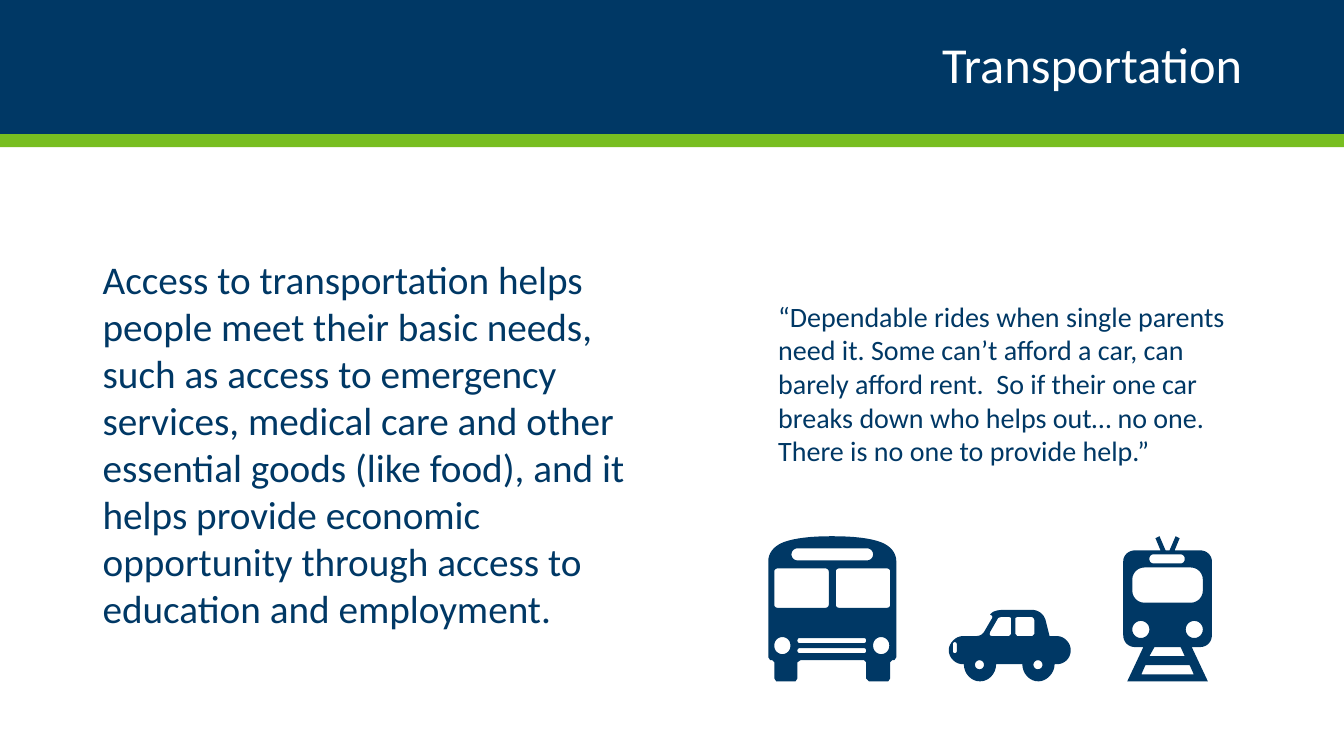
import math

from pptx import Presentation
from pptx.dml.color import RGBColor
from pptx.enum.shapes import MSO_SHAPE
from pptx.enum.text import MSO_ANCHOR, PP_ALIGN
from pptx.util import Inches, Pt

RECT = MSO_SHAPE.RECTANGLE
TOP, MIDDLE = MSO_ANCHOR.TOP, MSO_ANCHOR.MIDDLE
LEFT, RIGHT = PP_ALIGN.LEFT, PP_ALIGN.RIGHT
COLORS = {"navy": "003865", "green": "78BE21", "white": "FFFFFF"}
FONT = "Calibri"

TITLE = "Transportation"
BODY = ("Access to transportation helps people meet their basic needs, such as access to "
        "emergency services, medical care and other essential goods (like food), and it "
        "helps provide economic opportunity through access to education and employment.")
QUOTE = ("“Dependable rides when single parents need it. Some can’t afford a car, can barely "
         "afford rent.  So if their one car breaks down who helps out… no one. There is no "
         "one to provide help.”")

BUS = [(0.15, 0.06), (0.26, 0.02, 0.41, 0, 0.63, 0), (0.86, 0, 1.01, 0.02, 1.12, 0.06),
       (1.22, 0.1, 1.27, 0.17, 1.27, 0.25), (1.27, 1.2), (1.25, 1.23), (1.23, 1.23),
       (1.21, 1.25), (1.21, 1.41), (1.19, 1.44), (1, 1.44), (0.97, 1.41), (0.97, 1.25),
       (0.95, 1.23), (0.32, 1.23), (0.29, 1.25), (0.29, 1.41), (0.27, 1.44), (0.08, 1.44),
       (0.06, 1.41), (0.06, 1.25), (0.04, 1.23), (0.02, 1.23), (0, 1.2), (0, 0.25),
       (0, 0.17, 0.05, 0.1, 0.15, 0.06)]
CAR = [(1.07, 0.26), (1, 0.26), (0.96, 0.1), (0.94, 0.04, 0.89, 0, 0.82, 0), (0.56, 0),
       (0.49, 0, 0.43, 0.01, 0.41, 0.05), (0.42, 0.05, 0.45, 0.06, 0.42, 0.1),
       (0.35, 0.22), (0.33, 0.25, 0.3, 0.26, 0.27, 0.26), (0.14, 0.26),
       (0.07, 0.26, 0, 0.33, 0, 0.4), (0, 0.48, 0.07, 0.54, 0.14, 0.54), (0.15, 0.54),
       (0.15, 0.63, 0.22, 0.71, 0.31, 0.71), (0.4, 0.71, 0.47, 0.63, 0.47, 0.54),
       (0.73, 0.54), (0.73, 0.63, 0.8, 0.71, 0.89, 0.71),
       (0.97, 0.71, 1.05, 0.63, 1.05, 0.54), (1.07, 0.54),
       (1.15, 0.54, 1.21, 0.48, 1.21, 0.4), (1.21, 0.33, 1.15, 0.26, 1.07, 0.26)]
CAR_FRONT_WINDOW = [(0.62, 0.24), (0.6, 0.26), (0.43, 0.26), (0.41, 0.26, 0.4, 0.25, 0.41, 0.22),
                    (0.49, 0.08), (0.52, 0.07), (0.6, 0.07), (0.62, 0.08)]
CAR_REAR_WINDOW = [(0.66, 0.24), (0.66, 0.08), (0.68, 0.07), (0.81, 0.07),
                   (0.83, 0.07, 0.85, 0.08, 0.85, 0.11), (0.85, 0.24), (0.83, 0.26), (0.68, 0.26)]
TRAM = [(0.88, 0.98), (0.88, 0.25), (0.88, 0.19, 0.83, 0.14, 0.76, 0.14), (0.51, 0.14),
        (0.56, 0.02), (0.52, 0), (0.46, 0.14), (0.42, 0.14), (0.36, 0), (0.32, 0.02),
        (0.37, 0.14), (0.12, 0.14), (0.05, 0.14, 0, 0.19, 0, 0.25), (0, 0.98),
        (0, 1.05, 0.05, 1.1, 0.12, 1.1), (0.2, 1.1), (0.04, 1.44), (0.84, 1.44), (0.68, 1.1),
        (0.76, 1.1), (0.83, 1.1, 0.88, 1.05, 0.88, 0.98)]
TRAM_TRACKS = [[(0.61, 1.19), (0.26, 1.19), (0.31, 1.1), (0.57, 1.1)],
               [(0.7, 1.37), (0.18, 1.37), (0.22, 1.28), (0.66, 1.28)]]


def flatten(path, steps=8):
    """Return the points of a path whose items are line ends or cubic curves."""
    points = []
    for item in path:
        if len(item) == 2:
            points.append(item)
            continue
        ends = (points[-1], item[:2], item[2:4], item[4:])
        for i in range(1, steps + 1):
            t = i / steps
            weights = ((1 - t) ** 3, 3 * t * (1 - t) ** 2, 3 * t * t * (1 - t), t ** 3)
            points.append(tuple(sum(w * e[axis] for w, e in zip(weights, ends))
                                for axis in (0, 1)))
    return points


def rounded(x, y, w, h, radius, steps=6):
    """Return the points of a rounded rectangle, or of a circle at full radius."""
    centers = ((x + w - radius, y + h - radius), (x + radius, y + h - radius),
               (x + radius, y + radius), (x + w - radius, y + radius))
    points = []
    for quarter, (cx, cy) in enumerate(centers):
        for i in range(steps + 1):
            a = (quarter + i / steps) * math.pi / 2
            points.append((cx + radius * math.cos(a), cy + radius * math.sin(a)))
    return points


def paint(shape, color):
    """Give a shape a plain fill without line or shadow."""
    shape.shadow.inherit = False
    shape.fill.solid()
    shape.fill.fore_color.rgb = RGBColor.from_string(COLORS[color])
    shape.line.fill.background()


def add_icon(s, left, top, outline, holes):
    """Draw one icon with cut-out holes from the given top left corner."""
    contours = [[(Inches(left + x), Inches(top + y)) for x, y in points]
                for points in [flatten(outline)] + holes]
    builder = s.shapes.build_freeform(*contours[0][0])
    builder.add_line_segments(contours[0][1:])
    for contour in contours[1:]:
        builder.move_to(*contour[0])
        builder.add_line_segments(contour[1:])
    paint(builder.convert_to_shape(), "navy")


def add_text(s, box, text, size, color, align=LEFT, anchor=TOP, inset=0.05, spacing=1.0):
    """Place one wrapped paragraph in a box."""
    tf = s.shapes.add_textbox(*map(Inches, box)).text_frame
    frame = {"word_wrap": True, "vertical_anchor": anchor, "margin_top": Inches(inset)}
    for name, value in frame.items():
        setattr(tf, name, value)
    p = tf.paragraphs[0]
    p.alignment, p.line_spacing = align, spacing
    r = p.add_run()
    r.text = text
    for name, value in {"name": FONT, "size": Pt(size)}.items():
        setattr(r.font, name, value)
    r.font.color.rgb = RGBColor.from_string(COLORS[color])


def add_header(s, left, top, width, height):
    """Draw the title band with its green rule and title."""
    rule = 0.13
    for y, h, color in ((top, height, "navy"), (top + height, rule, "green")):
        paint(s.shapes.add_shape(RECT, *map(Inches, (left, y, width, h))), color)
    add_text(s, (left + 0.92, top + 0.17, 11.5, 1), TITLE, 36, "white", RIGHT, MIDDLE,
             spacing=0.9)


def add_vehicles(s, left, top, height):
    """Stand the bus, car and tram on the bottom line of the box."""
    add_icon(s, left, top, BUS, [
        rounded(0.23, 0.12, 0.81, 0.12, 0.06),
        *[rounded(x, 0.32, 0.54, 0.39, 0.03) for x in (0.06, 0.67)],
        *[rounded(x, 1, 0.16, 0.17, 0.08) for x in (0.06, 1.04)],
        *[rounded(0.29, y, 0.68, 0.05, 0.02) for y in (1.01, 1.11)]])
    add_icon(s, left + 1.79, top + height - 0.71, CAR, [
        rounded(0.04, 0.32, 0.04, 0.11, 0.02),
        *[rounded(x, 0.5, 0.09, 0.09, 0.045) for x in (0.26, 0.84)],
        flatten(CAR_FRONT_WINDOW), flatten(CAR_REAR_WINDOW)])
    add_icon(s, left + 3.52, top, TRAM, [
        rounded(0.26, 0.18, 0.35, 0.09, 0.04),
        rounded(0.09, 0.31, 0.7, 0.35, 0.12),
        *[rounded(x, 0.84, 0.17, 0.17, 0.085) for x in (0.09, 0.62)],
        *TRAM_TRACKS])


def main():
    """Build the transportation slide."""
    prs = Presentation()
    prs.slide_width, prs.slide_height = Inches(13.33), Inches(7.5)
    s = prs.slides.add_slide(prs.slide_layouts[6])
    add_header(s, 0, 0, 13.33, 1.33)
    add_text(s, (0.92, 1.74, 5.67, 5.01), BODY, 28, "navy", inset=0.79)
    add_text(s, (7.62, 2.92, 4.8, 1.78), QUOTE, 20, "navy")
    add_vehicles(s, 7.62, 5.32, 1.44)
    prs.save("out.pptx")


if __name__ == "__main__":
    main()
